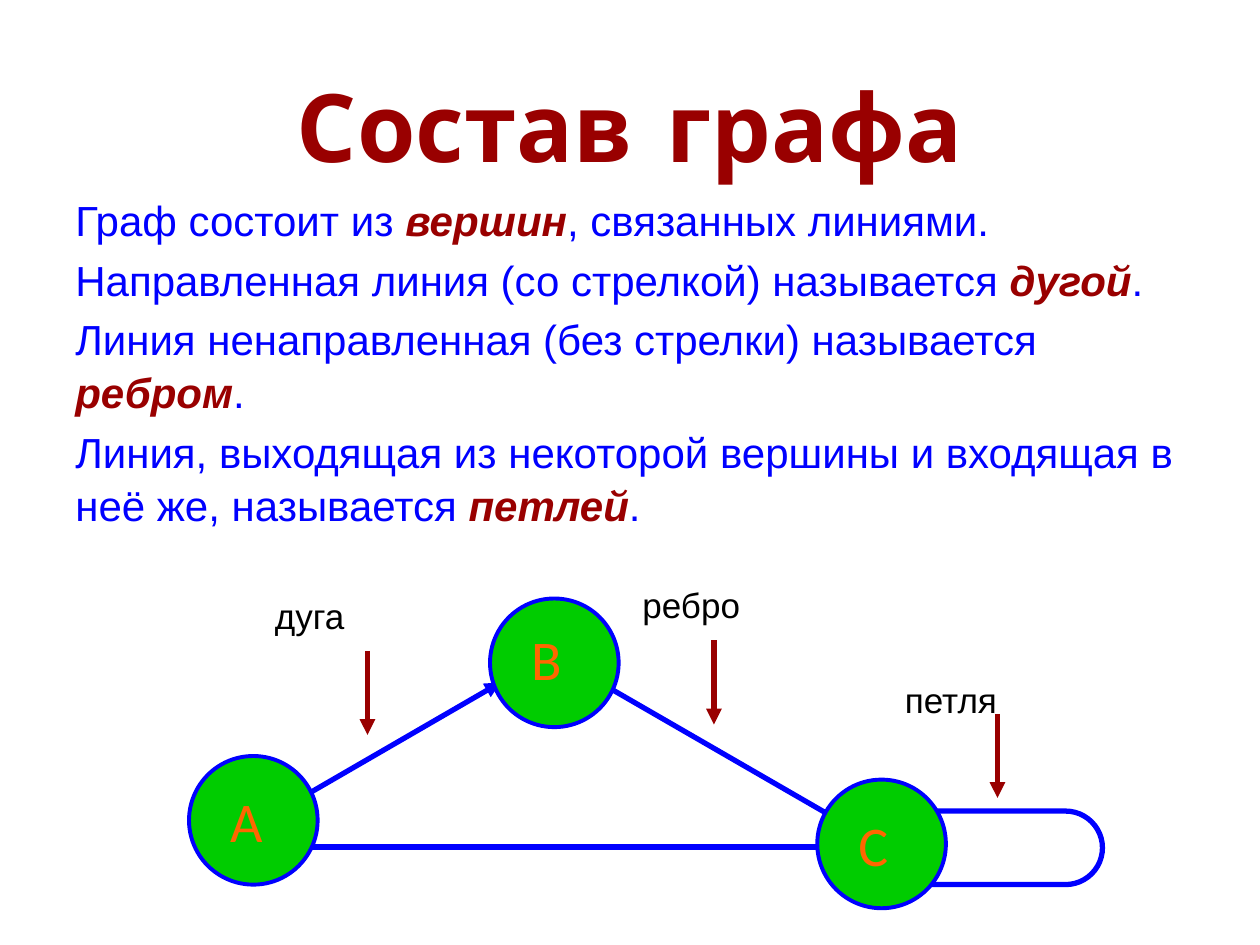
from lxml import etree
from pptx import Presentation
from pptx.dml.color import RGBColor
from pptx.enum.shapes import MSO_CONNECTOR, MSO_SHAPE
from pptx.enum.text import MSO_ANCHOR, PP_ALIGN
from pptx.oxml.ns import qn
from pptx.util import Pt

STRAIGHT = MSO_CONNECTOR.STRAIGHT
CIRCLE = MSO_SHAPE.OVAL
TERMINATOR = MSO_SHAPE.FLOWCHART_TERMINATOR
MIDDLE = MSO_ANCHOR.MIDDLE
CENTER = PP_ALIGN.CENTER

COLORS = {"red": "990000", "blue": "0000FF", "green": "00CC00",
          "orange": "FF6600", "black": "000000"}

DEFINITIONS = [
    ("Граф состоит из ", "вершин", ", связанных линиями."),
    ("Направленная линия (со стрелкой) называется ", "дугой", "."),
    ("Линия ненаправленная (без стрелки) называется ", "ребром", "."),
    ("Линия, выходящая из некоторой вершины и входящая в неё же, называется ",
     "петлей", "."),
]


def color(name):
    return RGBColor.from_string(COLORS[name])


def add_run(paragraph, text, font, size, ink, bold=False, italic=False):
    run = paragraph.add_run()
    run.text = text
    run.font.name = font
    run.font.size = Pt(size)
    run.font.color.rgb = color(ink)
    run.font.bold = bold
    run.font.italic = italic


def add_frame(slide, left, top, width, height):
    frame = slide.shapes.add_textbox(Pt(left), Pt(top), Pt(width), Pt(height)).text_frame
    frame.word_wrap = True
    return frame


def add_label(slide, box, text, font, size, ink):
    add_run(add_frame(slide, *box).paragraphs[0], text, font, size, ink)


def add_line(slide, start, end, ink, arrow=False):
    line = slide.shapes.add_connector(STRAIGHT, *map(Pt, start + end))
    line.line.color.rgb = color(ink)
    line.line.width = Pt(3)
    properties = line._element.spPr
    if arrow:
        etree.SubElement(line.line._get_or_add_ln(), qn("a:tailEnd"), type="triangle")
    etree.SubElement(properties, qn("a:effectLst"))


def add_outline(slide, kind, box, width, fill=None):
    shape = slide.shapes.add_shape(kind, *map(Pt, box))
    shape.shadow.inherit = False
    shape.line.color.rgb = color("blue")
    shape.line.width = Pt(width)
    if fill:
        shape.fill.solid()
        shape.fill.fore_color.rgb = color(fill)
    else:
        shape.fill.background()


def add_title(slide, left, top, width, height):
    frame = add_frame(slide, left, top, width, height)
    frame.vertical_anchor = MIDDLE
    heading = frame.paragraphs[0]
    heading.alignment = CENTER
    add_run(heading, "Состав графа", "Comic Neue", 54, "red", bold=True)


def add_definitions(slide, left, top, width, height):
    frame = add_frame(slide, left, top, width, height)
    for index, (opening, term, ending) in enumerate(DEFINITIONS):
        definition = frame.paragraphs[0] if index == 0 else frame.add_paragraph()
        definition.space_before = Pt(4)
        definition.line_spacing = 1.05
        add_run(definition, opening, "Arial", 24, "blue")
        add_run(definition, term, "Arial", 24, "red", bold=True, italic=True)
        add_run(definition, ending, "Arial", 24, "blue")


def add_graph(slide, left, top):
    diameter = 73.5
    add_outline(slide, TERMINATOR, (left + 390.5, top + 121.5, 131.5, 42), 3)
    for start, end, arrow in [((240, 51), (376, 129.5), False),
                              ((52.5, 142), (365, 142), False),
                              ((64, 114), (178, 48), True)]:
        add_line(slide, (left + start[0], top + start[1]),
                 (left + end[0], top + end[1]), "blue", arrow)
    for name, x, y, inset in [("А", 0, 90, 14), ("В", 172, 0, 11.5), ("С", 359, 103.5, 14)]:
        add_outline(slide, CIRCLE, (left + x, top + y, diameter, diameter), 2.25, "green")
        add_label(slide, (left + x + 16.5, top + y + inset, 45, 45),
                  name, "Calibri", 32, "orange")


def add_callout(slide, left, top, width, text, arrow_x, arrow_top):
    add_label(slide, (left, top, width, 29), text, "Arial", 20, "black")
    add_line(slide, (arrow_x, arrow_top), (arrow_x, arrow_top + 48), "red", arrow=True)


def main():
    presentation = Presentation()
    presentation.slide_width = Pt(720)
    presentation.slide_height = Pt(540)
    slide = presentation.slides.add_slide(presentation.slide_layouts[6])
    add_title(slide, 54, 29, 612, 85)
    add_definitions(slide, 36, 106, 642.5, 306)
    add_graph(slide, 108, 342)
    add_callout(slide, 510, 384, 120, "петля", 570, 408)
    add_callout(slide, 360, 330, 120, "ребро", 408, 366)
    add_callout(slide, 150, 336, 108, "дуга", 210, 372)
    presentation.save("out.pptx")


if __name__ == "__main__":
    main()
